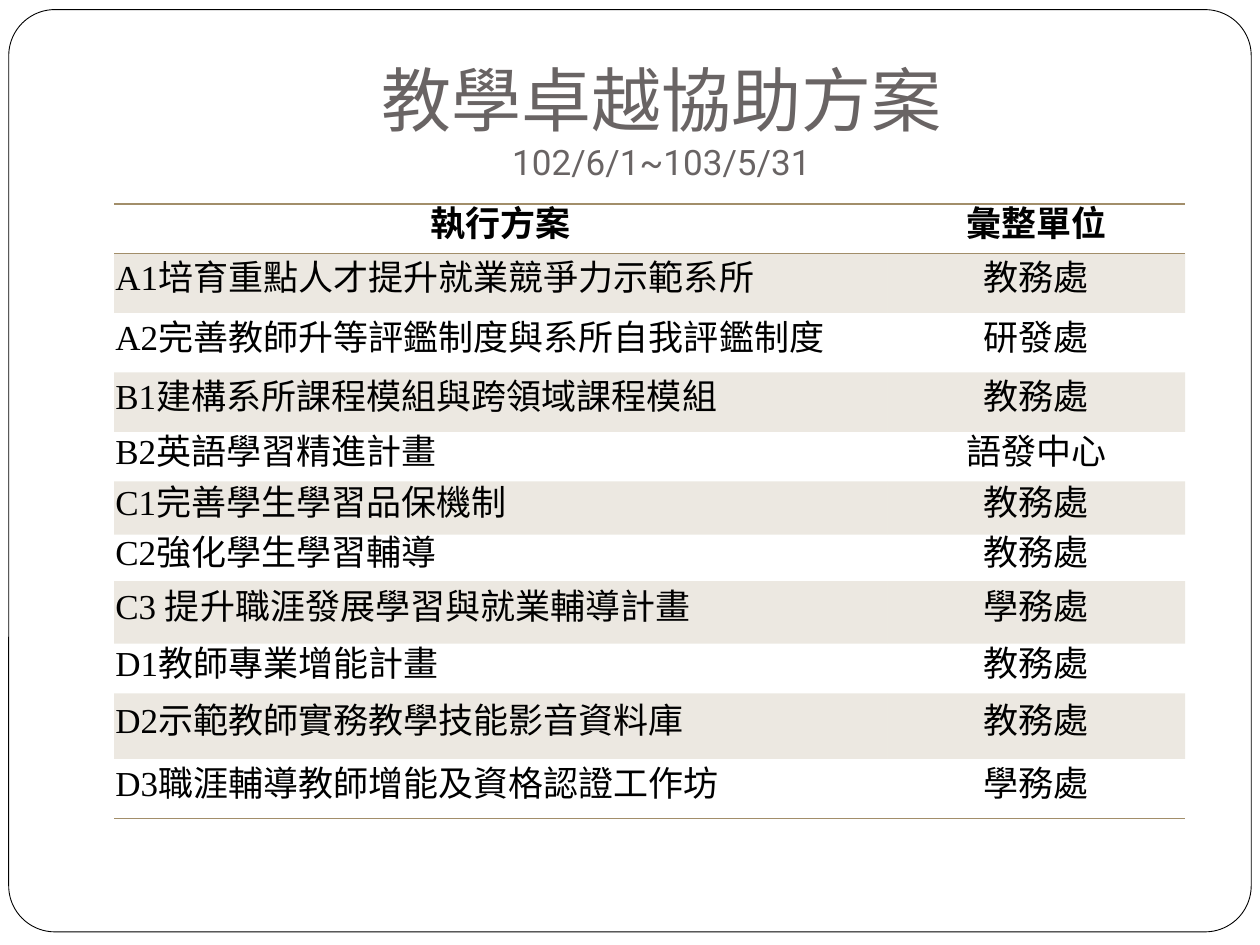
from lxml.etree import SubElement
from pptx import Presentation
from pptx.dml.color import RGBColor
from pptx.enum.shapes import MSO_SHAPE
from pptx.enum.text import MSO_ANCHOR, MSO_AUTO_SIZE, PP_ALIGN
from pptx.oxml import parse_xml
from pptx.oxml.ns import nsdecls, qn
from pptx.util import Pt

COLORS = {"white": "FFFFFF", "black": "000000", "title": "696464", "accent": "A28E6A"}
PLAIN_STYLE = "{2D5ABB26-0587-4C30-8999-92F81FD0307C}"
COL_WIDTHS = [442, 170]
ROW_HEIGHTS = [28.2, 34, 34, 34, 28.4, 30.4, 26.6, 35.8, 28.4, 37.4, 34]
ROWS = [
    ("執行方案", "彙整單位"),
    ("A1培育重點人才提升就業競爭力示範系所", "教務處"),
    ("A2完善教師升等評鑑制度與系所自我評鑑制度", "研發處"),
    ("B1建構系所課程模組與跨領域課程模組", "教務處"),
    ("B2英語學習精進計畫", "語發中心"),
    ("C1完善學生學習品保機制", "教務處"),
    ("C2強化學生學習輔導", "教務處"),
    ("C3 提升職涯發展學習與就業輔導計畫", "學務處"),
    ("D1教師專業增能計畫", "教務處"),
    ("D2示範教師實務教學技能影音資料庫", "教務處"),
    ("D3職涯輔導教師增能及資格認證工作坊", "學務處"),
]


def rgb(name):
    return RGBColor.from_string(COLORS[name])


def add_frame(s):
    sp = s.shapes.add_shape(MSO_SHAPE.ROUNDED_RECTANGLE, Pt(5), Pt(5.5), Pt(710), Pt(527))
    sp.adjustments[0] = 0.05
    sp.shadow.inherit = False
    sp.fill.solid()
    sp.fill.fore_color.rgb = rgb("white")
    sp.line.color.rgb = rgb("black")
    sp.line.width = Pt(0.5)
    # Send the frame behind the title
    s.shapes._spTree.insert(2, sp._element)


def set_title(s, heading, period):
    sp = s.shapes.title
    sp.left, sp.top, sp.width, sp.height = Pt(72), Pt(21.6), Pt(612), Pt(90)
    tf = sp.text_frame
    tf.auto_size = MSO_AUTO_SIZE.NONE
    tf.vertical_anchor = MSO_ANCHOR.BOTTOM
    tf.margin_bottom = Pt(7.2)
    p = tf.paragraphs[0]
    p.alignment = PP_ALIGN.CENTER
    p.font.name = "Roboto"
    p.font.color.rgb = rgb("title")
    r = p.add_run()
    r.text, r.font.size = heading, Pt(40)
    p.add_line_break()
    r = p.add_run()
    r.text, r.font.size = period, Pt(20)


def set_borders(cell, sides):
    tcPr = cell._tc.get_or_add_tcPr()
    for i, side in enumerate(sides):
        tcPr.insert(i, parse_xml(
            f'<a:ln{side} {nsdecls("a")} w="{Pt(1)}"><a:solidFill>'
            f'<a:srgbClr val="{COLORS["accent"]}"/></a:solidFill></a:ln{side}>'))


def fill_cell(cell, banded):
    if not banded:
        cell.fill.background()
        return
    cell.fill.solid()
    cell.fill.fore_color.rgb = rgb("accent")
    color = cell._tc.tcPr.find(".//" + qn("a:srgbClr"))
    SubElement(color, qn("a:alpha")).set("val", "20000")


def write_cell(cell, text, bold, centered):
    cell.margin_left = cell.margin_right = Pt(0.7)
    cell.margin_top = cell.margin_bottom = 0
    cell.vertical_anchor = MSO_ANCHOR.MIDDLE
    p = cell.text_frame.paragraphs[0]
    p.text = text
    p.alignment = PP_ALIGN.CENTER if centered else PP_ALIGN.LEFT
    p.line_spacing = Pt(20)
    p.font.name = "Times New Roman"
    p.font.size = Pt(20)
    p.font.bold = bold
    p.font.color.rgb = rgb("black")


def add_plan_table(s):
    frame = s.shapes.add_table(len(ROWS), len(COL_WIDTHS), Pt(65.2), Pt(116.6),
                               Pt(sum(COL_WIDTHS)), Pt(sum(ROW_HEIGHTS)))
    table = frame.table
    table.first_row = table.horz_banding = False
    table._tbl.tblPr.find(qn("a:tableStyleId")).text = PLAIN_STYLE
    for column, width in zip(table.columns, COL_WIDTHS):
        column.width = Pt(width)
    for row, height in zip(table.rows, ROW_HEIGHTS):
        row.height = Pt(height)
    # Odd rows are banded; rules enclose the header and close the table
    borders = {0: "TB", len(ROWS) - 1: "B"}
    for i, texts in enumerate(ROWS):
        for j, text in enumerate(texts):
            cell = table.cell(i, j)
            write_cell(cell, text, bold=i == 0, centered=i == 0 or j == 1)
            fill_cell(cell, banded=i % 2 == 1)
            set_borders(cell, borders.get(i, ""))


def main():
    prs = Presentation()
    prs.slide_width, prs.slide_height = Pt(720), Pt(540)
    s = prs.slides.add_slide(prs.slide_layouts[5])
    add_frame(s)
    set_title(s, "教學卓越協助方案", "102/6/1~103/5/31")
    add_plan_table(s)
    prs.save("out.pptx")


if __name__ == "__main__":
    main()
